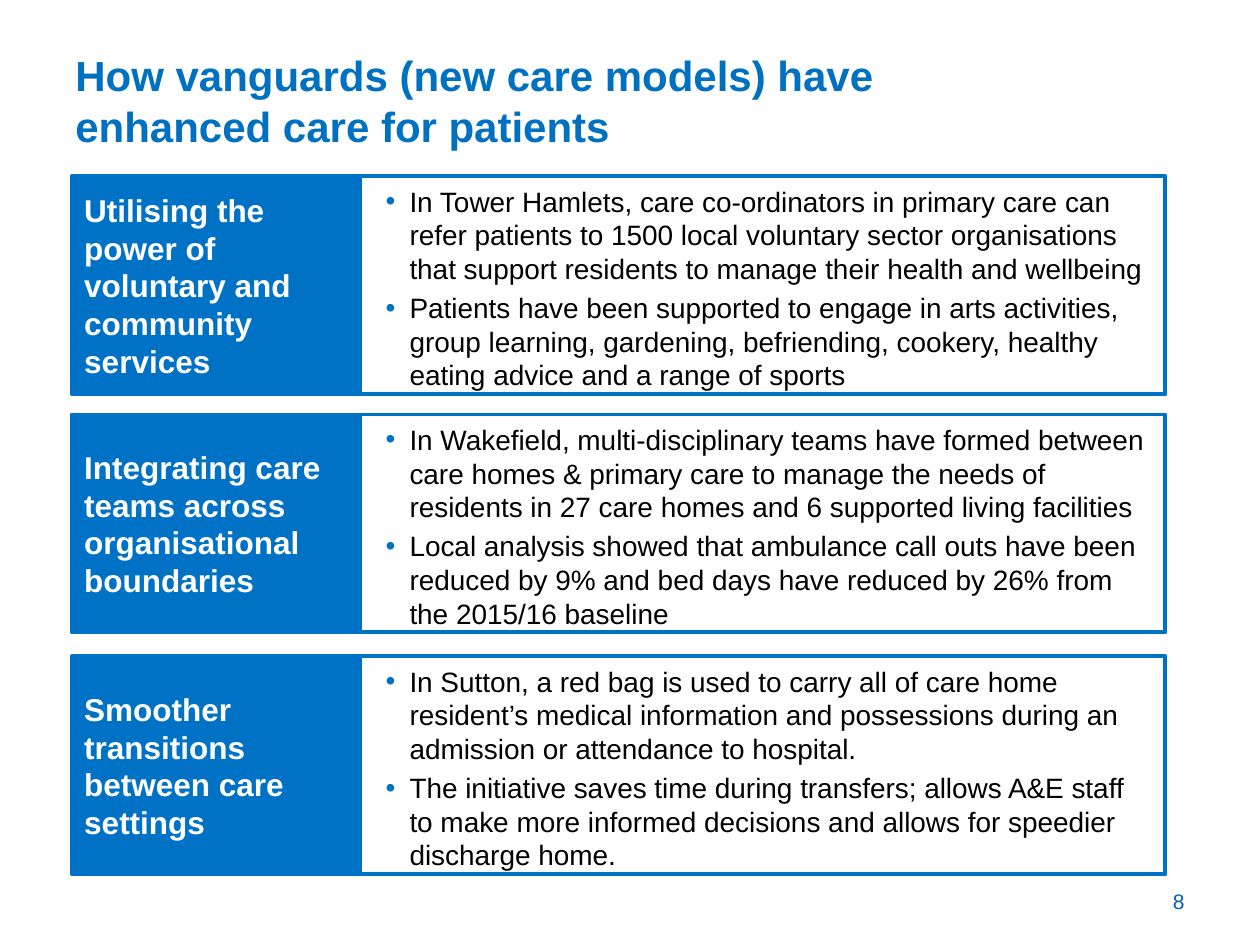
from lxml import etree
from pptx import Presentation
from pptx.dml.color import RGBColor
from pptx.enum import shapes, text
from pptx.oxml.ns import qn
from pptx.util import Pt

COLOURS = {"title": "0070C0", "panel": "0072C6", "number": "005EB8",
           "white": "FFFFFF", "black": "000000"}
TITLE = "How vanguards (new care models) have enhanced care for patients"
LEFT, WIDTH, HEIGHT = 41.04, 624.96, 124.56
HEADING_WIDTH = 164.88
ROWS = [
    (100.8, "Utilising the power of voluntary and community services", [
        "In Tower Hamlets, care co-ordinators in primary care can refer patients to 1500 "
        "local voluntary sector organisations that support residents to manage their "
        "health and wellbeing",
        "Patients have been supported to engage in arts activities, group learning, "
        "gardening, befriending, cookery, healthy eating advice and a range of sports"]),
    (236.88, "Integrating care teams across organisational boundaries", [
        "In Wakefield, multi-disciplinary teams have formed between care homes & primary "
        "care to manage the needs of residents in 27 care homes and 6 supported living "
        "facilities",
        "Local analysis showed that ambulance call outs have been reduced by 9% and bed "
        "days have reduced by 26% from the 2015/16 baseline"]),
    (375.12, "Smoother transitions between care settings", [
        "In Sutton, a red bag is used to carry all of care home resident’s medical "
        "information and possessions during an admission or attendance to hospital.",
        "The initiative saves time during transfers; allows A&E staff to make more "
        "informed decisions and allows for speedier discharge home."]),
]


def colour(name):
    return RGBColor.from_string(COLOURS[name])


def set_values(target, values):
    for name, value in values.items():
        setattr(target, name, value)


def add_bullet(paragraph):
    properties = paragraph._p.get_or_add_pPr()
    properties.set("marL", str(Pt(13.7)))
    properties.set("indent", str(Pt(-13.7)))
    bullet_colour = etree.SubElement(properties, qn("a:buClr"))
    etree.SubElement(bullet_colour, qn("a:srgbClr"), val=COLOURS["panel"])
    etree.SubElement(properties, qn("a:buFont"), typeface="Arial")
    etree.SubElement(properties, qn("a:buChar"), char="•")


def write(shape, lines, size, font_colour, bold=False, bullets=False,
          alignment=text.PP_ALIGN.LEFT, margins=None):
    frame = shape.text_frame
    set_values(frame, {"word_wrap": True, "vertical_anchor": text.MSO_ANCHOR.MIDDLE,
                       **(margins or {})})
    for index, line in enumerate(lines):
        paragraph = frame.add_paragraph() if index else frame.paragraphs[0]
        paragraph.text = line
        paragraph.alignment = alignment
        if index:
            paragraph.space_before = Pt(3.2)
        if bullets:
            paragraph.level = 1
            add_bullet(paragraph)
        set_values(paragraph.font, {"name": "Arial", "size": Pt(size), "bold": bold})
        paragraph.font.color.rgb = colour(font_colour)


def add_text(slide, box, *args, **formats):
    write(slide.shapes.add_textbox(*map(Pt, box)), *args, **formats)


def add_panel(group, box, filled):
    shape = group.shapes.add_shape(shapes.MSO_SHAPE.RECTANGLE, *map(Pt, box))
    shape.shadow.inherit = False
    if filled:
        shape.fill.solid()
        shape.fill.fore_color.rgb = colour("panel")
    else:
        shape.fill.background()
    shape.line.color.rgb = colour("panel")
    shape.line.width = Pt(2.25)
    return shape


def add_row(slide, box, heading, bullets):
    left, top, width, height = box
    group = slide.shapes.add_group_shape()
    heading_panel = add_panel(group, (left, top, HEADING_WIDTH, height), True)
    write(heading_panel, [heading], 18, "white", bold=True)
    detail_box = (left + HEADING_WIDTH, top, width - HEADING_WIDTH, height)
    margins = {"margin_left": Pt(14.4), "margin_right": Pt(7.2),
               "margin_top": Pt(5), "margin_bottom": Pt(2)}
    write(add_panel(group, detail_box, False), bullets, 16, "black",
          bullets=True, margins=margins)


def main():
    presentation = Presentation()
    set_values(presentation, {"slide_width": Pt(720), "slide_height": Pt(540)})
    slide = presentation.slides.add_slide(presentation.slide_layouts[6])
    add_text(slide, (36, 30.96, 581, 52.56), [TITLE], 24, "title", bold=True)
    for top, heading, bullets in ROWS:
        add_row(slide, (LEFT, top, WIDTH, HEIGHT), heading, bullets)
    add_text(slide, (516, 500.4, 168, 28.8), ["8"], 12, "number",
             alignment=text.PP_ALIGN.RIGHT)
    presentation.save("out.pptx")


if __name__ == "__main__":
    main()
